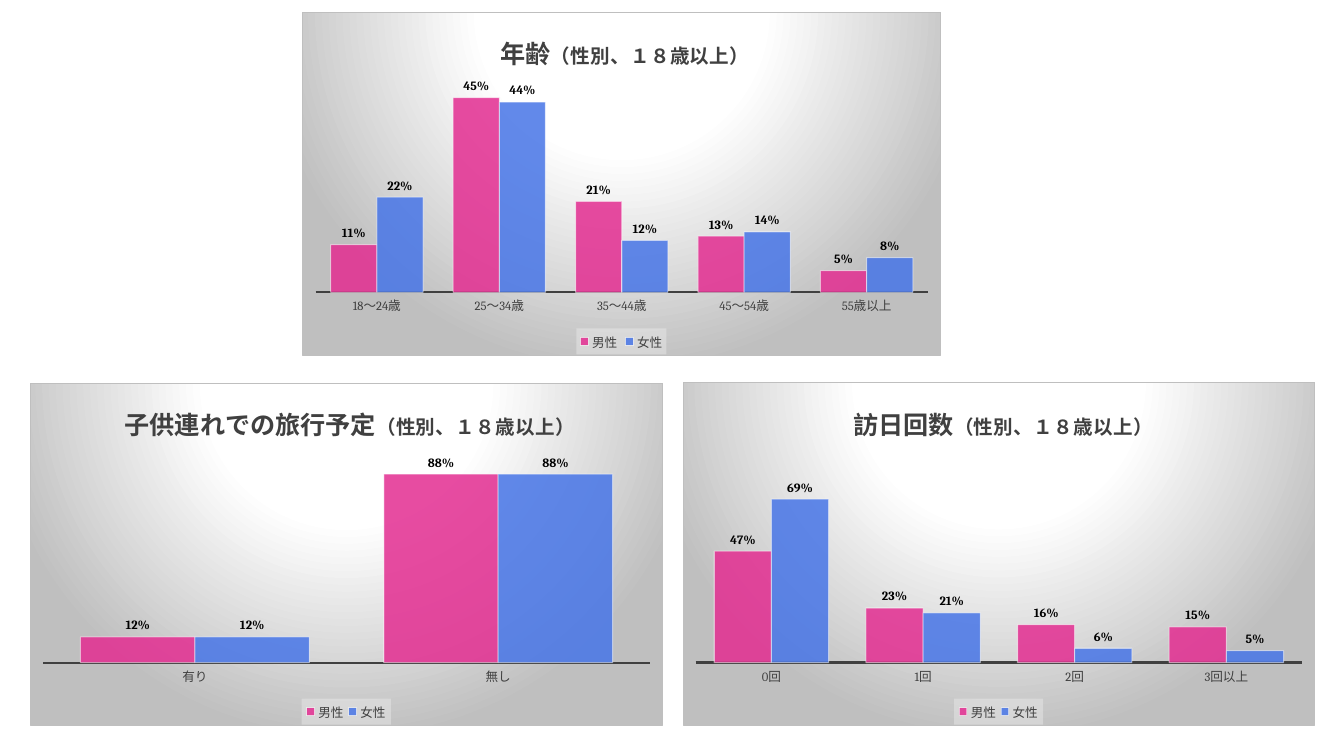
from lxml.etree import SubElement
from pptx import Presentation
from pptx.chart.data import CategoryChartData
from pptx.dml.color import RGBColor
from pptx.enum.chart import XL_CHART_TYPE, XL_LABEL_POSITION, XL_LEGEND_POSITION, XL_TICK_MARK
from pptx.oxml import parse_xml
from pptx.oxml.ns import nsdecls, qn
from pptx.util import Cm, Pt


def rgb(hex_code):
    return RGBColor.from_string(hex_code)


def style_font(font, size, color, bold=False, name="Cambria"):
    font.size = Pt(size)
    font.bold = bold
    font.name = name
    font.color.rgb = rgb(color)


def add_run(paragraph, text, **style):
    run = paragraph.add_run()
    run.text = text
    style_font(run.font, **style)


def place(part, index, inner=False, **bounds):
    for previous in part.findall(qn("c:layout")):
        part.remove(previous)
    target = '<c:layoutTarget val="inner"/>' if inner else ""
    modes = "".join(f'<c:{key}Mode val="edge"/>' for key in "xy")
    values = "".join(f'<c:{key} val="{value:.3f}"/>' for key, value in bounds.items())
    part.insert(index, parse_xml(
        f'<c:layout {nsdecls("c")}><c:manualLayout>{target}{modes}{values}'
        "</c:manualLayout></c:layout>"))


class SurveySlide:
    ink = "404040"
    label = "000000"
    border = "BFBFBF"
    genders = {"男性": "E32D91", "女性": "4775E7"}
    audience = "（性別、１８歳以上）"
    baseline = 0.817

    def __init__(self, presentation):
        self.slide = presentation.slides.add_slide(presentation.slide_layouts[6])

    def add_survey(self, topic, categories, answers, box, maximum, plot_top, title_left):
        survey = CategoryChartData(number_format="0%")
        survey.categories = categories
        for gender, shares in zip(self.genders, answers):
            survey.add_series(gender, shares)
        chart = self.slide.shapes.add_chart(
            XL_CHART_TYPE.COLUMN_CLUSTERED, *(Cm(length) for length in box), survey).chart
        style_font(chart.font, 10, self.label)
        self.set_background(chart)
        self.set_title(chart, topic, title_left)
        self.set_axes(chart, maximum)
        self.set_columns(chart)
        self.set_legend(chart)
        place(chart._chartSpace.chart.plotArea, 0, inner=True,
              x=0.02, y=plot_top, w=0.96, h=self.baseline - plot_top)

    def set_background(self, chart):
        stops = "".join(
            f'<a:gs pos="{position}000"><a:srgbClr val="{color}"/></a:gs>'
            for position, color in ((0, "FFFFFF"), (39, "FFFFFF"), (100, self.border)))
        chart._chartSpace.chart.addnext(parse_xml(
            f'<c:spPr {nsdecls("c", "a")}><a:gradFill><a:gsLst>{stops}</a:gsLst>'
            '<a:path path="circle"><a:fillToRect l="50000" t="-80000" r="50000" b="180000"/>'
            f'</a:path></a:gradFill><a:ln w="{Pt(0.75)}"><a:solidFill>'
            f'<a:srgbClr val="{self.border}"/></a:solidFill></a:ln></c:spPr>'))

    def set_title(self, chart, topic, left):
        chart.has_title = True
        heading = chart.chart_title.text_frame.paragraphs[0]
        add_run(heading, topic, size=18, color=self.ink, bold=True)
        add_run(heading, self.audience, size=14, color=self.ink, bold=True)
        place(chart.chart_title._element, 1, x=left, y=0.05)

    def set_axes(self, chart, maximum):
        shares = chart.value_axis
        shares.minimum_scale = 0
        shares.maximum_scale = maximum
        shares.has_major_gridlines = False
        shares.visible = False
        groups = chart.category_axis
        groups.major_tick_mark = XL_TICK_MARK.NONE
        groups.format.line.width = Pt(1.5)
        groups.format.line.color.rgb = rgb(self.ink)
        style_font(groups.tick_labels.font, 9, self.ink)

    def set_columns(self, chart):
        columns = chart.plots[0]
        columns.gap_width = 65
        columns.overlap = 0
        columns.vary_by_categories = False
        for gender in columns.series:
            look = gender.format
            look.fill.solid()
            look.fill.fore_color.rgb = rgb(self.genders[gender.name])
            look.line.width = Pt(0.75)
            look.line.color.rgb = rgb("FFFFFF")
            colors = gender._element.find(qn("c:spPr")).iter(qn("a:srgbClr"))
            for color, opacity in zip(list(colors), (85, 50)):
                SubElement(color, qn("a:alpha")).set("val", f"{opacity}000")
            labels = gender.data_labels
            labels.show_value = True
            labels.number_format = "0%"
            labels.number_format_is_linked = False
            labels.position = XL_LABEL_POSITION.OUTSIDE_END
            style_font(labels.font, 9, self.label, bold=True)

    def set_legend(self, chart):
        chart.has_legend = True
        legend = chart.legend
        legend.position = XL_LEGEND_POSITION.BOTTOM
        legend.include_in_layout = False
        style_font(legend.font, 9, self.ink)
        place(legend._element, 1, x=0.429, y=0.922, w=0.141, h=0.076)
        legend._element.find(qn("c:overlay")).addnext(parse_xml(
            f'<c:spPr {nsdecls("c", "a")}><a:solidFill><a:srgbClr val="F2F2F2">'
            '<a:alpha val="39000"/></a:srgbClr></a:solidFill></c:spPr>'))


def main():
    presentation = Presentation()
    presentation.slide_width = Cm(33.87)
    presentation.slide_height = Cm(19.05)
    survey = SurveySlide(presentation)
    survey.add_survey(
        "訪日回数", ["0回", "1回", "2回", "3回以上"],
        [(0.47, 0.23, 0.16, 0.15), (0.69, 0.21, 0.06, 0.05)],
        box=(17.2, 9.63, 15.95, 8.66), maximum=0.8, plot_top=0.264, title_left=0.265)
    survey.add_survey(
        "子供連れでの旅行予定", ["有り", "無し"],
        [(0.12, 0.88), (0.12, 0.88)],
        box=(0.76, 9.65, 15.95, 8.64), maximum=1, plot_top=0.19, title_left=0.144)
    survey.add_survey(
        "年齢", ["18～24歳", "25～34歳", "35～44歳", "45～54歳", "55歳以上"],
        [(0.11, 0.45, 0.21, 0.13, 0.05), (0.22, 0.44, 0.12, 0.14, 0.08)],
        box=(7.62, 0.3, 16.1, 8.66), maximum=0.5, plot_top=0.186, title_left=0.305)
    presentation.save("out.pptx")


if __name__ == "__main__":
    main()
